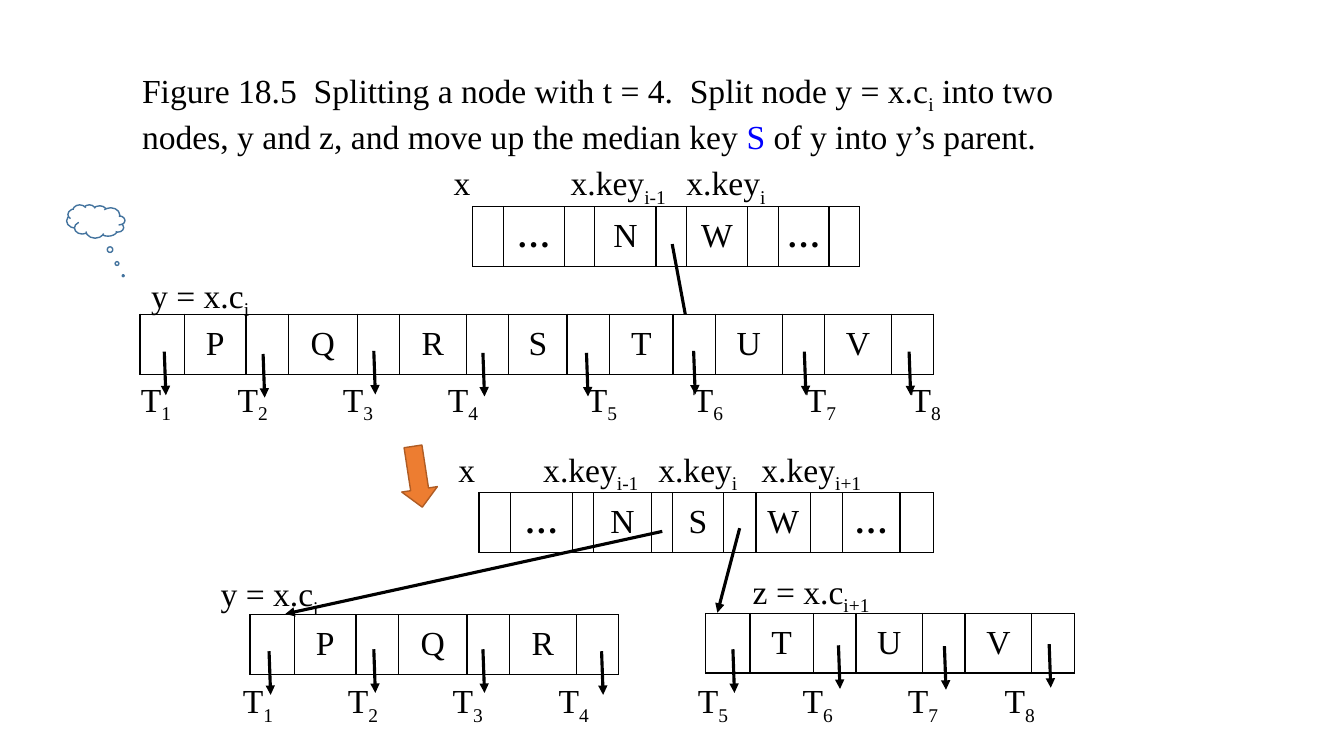
"""Builds the slide on splitting a B-tree node with t = 4."""
from lxml.etree import SubElement as Sub
from pptx import Presentation
from pptx.dml.color import RGBColor as Rgb
from pptx.enum.shapes import MSO_CONNECTOR as Link, MSO_SHAPE as Kind
from pptx.enum.text import MSO_AUTO_SIZE as Fit, PP_ALIGN as Align
from pptx.oxml.ns import qn
from pptx.util import Cm, Pt

HUES = {"ink": "000000", "paper": "FFFFFF", "key": "0000FF",
        "arrow": "ED7D31", "edge": "AF5C24", "cloud": "43739E"}


class Board:
    face = "Times New Roman"
    size = 24

    def __init__(self, slide):
        self.slide = slide
        self.shapes = slide.shapes

    def hue(self, name):
        return Rgb.from_string(HUES[name])

    def style(self, para, bold=False):
        font = para.font
        font.name, font.size, font.bold = self.face, Pt(self.size), bold
        font.color.rgb = self.hue("ink")

    def runs(self, para, text, hue=None):
        for n, part in enumerate(text.split("|")):
            run = para.add_run()
            run.text = part
            if n % 2:
                run._r.get_or_add_rPr().set("baseline", "-25000")
            if hue:
                run.font.color.rgb = self.hue(hue)

    def text(self, x, y, w, h, text, tabs=(), lead=None):
        frame = self.shapes.add_textbox(Cm(x), Cm(y), Cm(w), Cm(h)).text_frame
        frame.word_wrap = True
        frame.auto_size = Fit.SHAPE_TO_FIT_TEXT
        para = frame.paragraphs[0]
        if lead:
            para.line_spacing = lead
        if tabs:
            stops = Sub(para._p.get_or_add_pPr(), qn("a:tabLst"))
            for pos in tabs:
                Sub(stops, qn("a:tab"), pos=str(Cm(pos)), algn="l")
        self.style(para)
        self.runs(para, text)
        return para

    def node(self, x, y, h, keys, cols):
        grid = self.shapes.add_table(1, len(cols), Cm(x), Cm(y),
                                     Cm(sum(cols)), Cm(h)).table
        grid.first_row = grid.horz_banding = False
        grid.rows[0].height = Cm(h)
        for n, wide in enumerate(cols):
            grid.columns[n].width = Cm(wide)
            self.cell(grid.cell(0, n), keys[n // 2] if n % 2 else "")

    def cell(self, cell, key):
        cell.margin_left = cell.margin_right = Cm(0.18)
        cell.margin_top = cell.margin_bottom = 0
        props = cell._tc.get_or_add_tcPr()
        for side in "LRTB":
            line = Sub(props, qn(f"a:ln{side}"), w=str(Pt(1)))
            fill = Sub(line, qn("a:solidFill"))
            Sub(fill, qn("a:srgbClr"), val=HUES["ink"])
        cell.fill.solid()
        cell.fill.fore_color.rgb = self.hue("paper")
        if key:
            para = cell.text_frame.paragraphs[0]
            para.alignment, para.line_spacing = Align.CENTER, 1.3
            self.style(para, key == "…")
            self.runs(para, key)

    def arrow(self, x, y, to_x, to_y):
        link = self.shapes.add_connector(Link.STRAIGHT, Cm(x), Cm(y),
                                         Cm(to_x), Cm(to_y))
        link.line.width = Pt(2.25)
        link.line.color.rgb = self.hue("ink")
        Sub(link.line._get_or_add_ln(), qn("a:tailEnd"), type="triangle")
        Sub(link._element.spPr, qn("a:effectLst"))

    def drops(self, starts):
        for x, y in starts:
            self.arrow(x, y, x + 0.04, y + 1.1)

    def shape(self, kind, x, y, w, h, fill, line):
        shape = self.shapes.add_shape(kind, Cm(x), Cm(y), Cm(w), Cm(h))
        shape.shadow.inherit = False
        shape.fill.solid()
        shape.fill.fore_color.rgb = self.hue(fill)
        shape.line.color.rgb = self.hue(line)
        shape.line.width = Pt(1)
        return shape


def main():
    deck = Presentation()
    deck.slide_width, deck.slide_height = Cm(33.87), Cm(19.05)
    board = Board(deck.slides.add_slide(deck.slide_layouts[6]))

    title = board.text(3.33, 1.63, 25.1, 2.31,
                       "Figure 18.5  Splitting a node with t = 4.  Split node "
                       "y = x.c|i| into two nodes, y and z, and move up the "
                       "median key ")
    board.runs(title, "S ", "key")
    board.runs(title, "of y into y’s parent.")

    board.node(11.91, 5.21, 1.51, "…NW…",
               [0.77, 1.54, 0.77, 1.54, 0.77, 1.54, 0.77, 1.28, 0.77])
    board.arrow(16.94, 6.15, 17.4, 8.61)
    board.node(3.53, 7.92, 1.51, "PQRSTUV",
               [1.12, 1.55, 1.07, 1.73, 1.07, 1.68, 1.07, 1.47,
                1.07, 1.6, 1.07, 1.68, 1.07, 1.68, 1.07])
    board.drops([(4.14, 8.86), (6.63, 8.92), (9.42, 8.84), (12.17, 8.89),
                 (14.78, 8.89), (17.48, 8.84), (20.27, 8.86), (22.91, 8.86)])
    board.text(11.18, 3.96, 10.13, 1.27, "x\tx.key|i-1|\tx.key|i",
               [2.95, 5.87])
    board.text(3.56, 6.45, 3.1, 1.45, "y = x.c|i", lead=1.3)

    board.text(11.3, 11.18, 11.48, 1.27,
               "x\tx.key|i-1|\tx.key|i|\tx.key|i+1", [2.14, 5.04, 7.64])
    board.node(12.07, 12.42, 1.51, "…NSW…",
               [0.79, 1.57, 0.53, 1.45, 0.53, 1.3, 0.81, 1.37,
                0.81, 1.45, 0.84])
    board.node(6.3, 15.49, 1.5, "PQR",
               [1.12, 1.55, 1.07, 1.73, 1.07, 1.68, 1.07])
    board.node(17.78, 15.46, 1.5, "TUV",
               [1.12, 1.6, 1.07, 1.68, 1.07, 1.68, 1.07])
    board.arrow(16.69, 13.39, 7.19, 15.47)
    board.arrow(18.64, 13.31, 18.08, 15.44)
    board.drops([(6.78, 16.41), (9.42, 16.36), (12.17, 16.36), (15.16, 16.41),
                 (18.47, 16.36), (21.13, 16.26), (23.8, 16.28),
                 (26.44, 16.23)])

    trees = "|\t".join(f"T|{n}" for n in range(1, 9))
    board.text(5.87, 17.02, 21.77, 1.27, trees,
               [2.65, 5.29, 7.96, 11.47, 14.11, 16.76, 19.2])
    down = board.shape(Kind.RIGHT_ARROW, 9.75, 11.56, 1.55, 0.91,
                       "arrow", "edge")
    down.rotation = 81.3
    board.text(3.3, 9.42, 21.77, 1.27, trees,
               [2.44, 5.09, 7.74, 11.24, 13.91, 16.76, 19.4])
    board.text(18.72, 14.25, 3.61, 1.27, "z = x.c|i+1")
    board.text(5.31, 13.97, 3.1, 1.45, "y = x.c|i", lead=1.3)

    cloud = board.shape(Kind.CLOUD_CALLOUT, 1.68, 5.16, 1.47, 0.84,
                        "paper", "cloud")
    cloud.adjustments[0], cloud.adjustments[1] = -0.47, 1.63
    cloud._element.spPr.xfrm.set("flipH", "1")
    deck.save("out.pptx")


if __name__ == "__main__":
    main()
